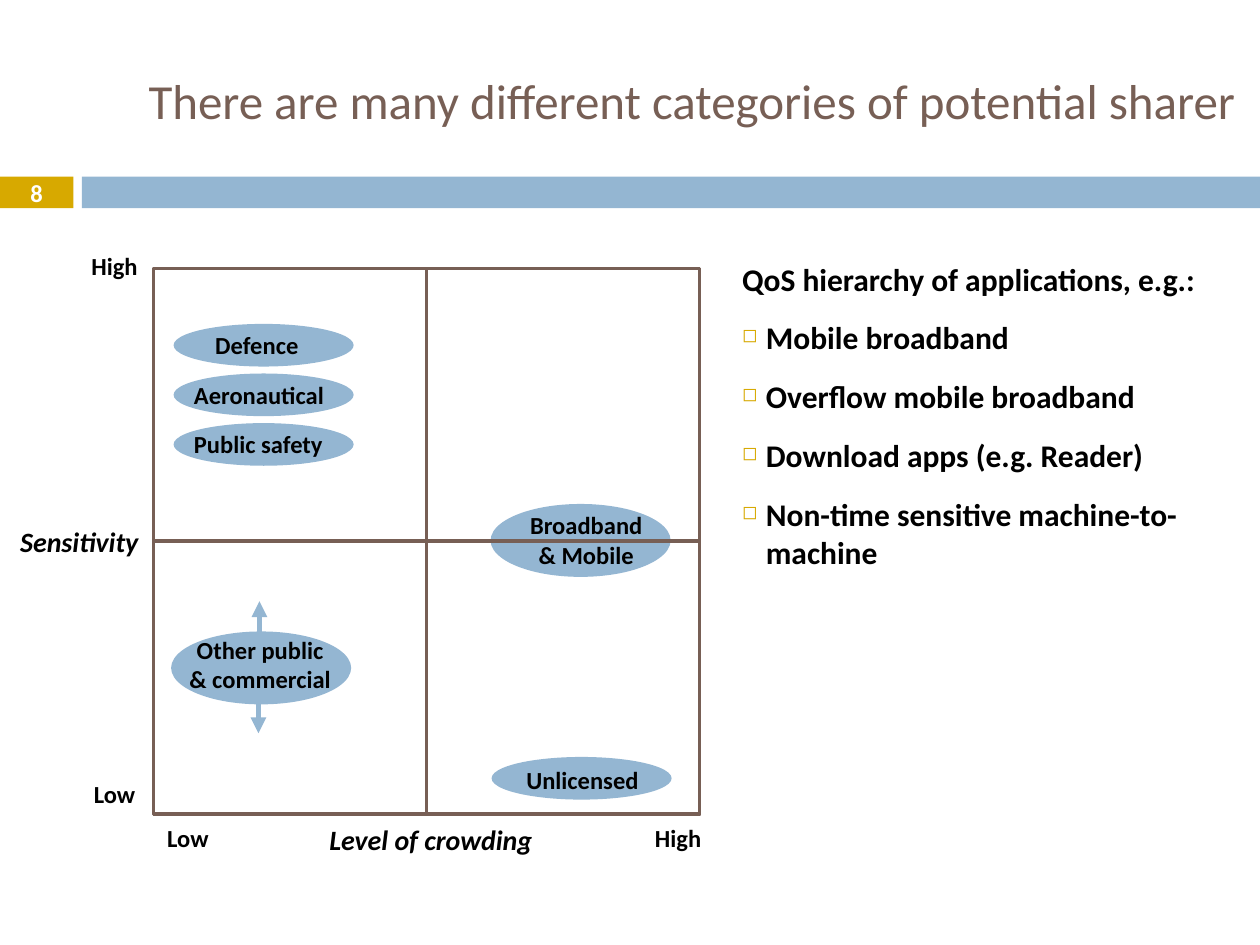
from dataclasses import dataclass
from itertools import product

from lxml.etree import SubElement
from pptx import Presentation
from pptx.dml.color import RGBColor
from pptx.enum.shapes import MSO_CONNECTOR, MSO_SHAPE
from pptx.enum.text import MSO_ANCHOR, MSO_AUTO_SIZE, PP_ALIGN
from pptx.oxml.ns import qn
from pptx.util import Cm, Pt


@dataclass(frozen=True)
class Theme:
    font: str = "Calibri"
    blue: RGBColor = RGBColor(0x94, 0xB6, 0xD2)
    gold: RGBColor = RGBColor(0xD7, 0xA9, 0x00)
    brown: RGBColor = RGBColor(0x77, 0x5F, 0x55)
    black: RGBColor = RGBColor(0, 0, 0)
    white: RGBColor = RGBColor(255, 255, 255)
    title: int = 28
    body: int = 18
    axis: int = 16
    label: int = 14


class Deck:
    """Holds the theme and the current slide, and draws each kind of element."""

    def __init__(self, prs, theme):
        self.t = theme
        self.s = prs.slides.add_slide(prs.slide_layouts[5])

    def run(self, p, text, size, color, bold=True, italic=False):
        r = p.add_run()
        r.text = text
        r.font.name = self.t.font
        r.font.size = Pt(size)
        r.font.color.rgb = color
        r.font.bold = bold
        r.font.italic = italic

    def title(self, text, x, y, w, h):
        sp = self.s.shapes.title
        sp.left, sp.top, sp.width, sp.height = Cm(x), Cm(y), Cm(w), Cm(h)
        tf = sp.text_frame
        tf.auto_size = MSO_AUTO_SIZE.NONE
        tf.vertical_anchor = MSO_ANCHOR.MIDDLE
        p = tf.paragraphs[0]
        p.alignment = PP_ALIGN.LEFT
        self.run(p, text, self.t.title, self.t.brown, bold=False)

    def shape(self, kind, x, y, w, h, fill=None, line=None):
        sp = self.s.shapes.add_shape(kind, Cm(x), Cm(y), Cm(w), Cm(h))
        sp.shadow.inherit = False
        if fill is None:
            sp.fill.background()
        else:
            sp.fill.solid()
            sp.fill.fore_color.rgb = fill
        if line is None:
            sp.line.fill.background()
        else:
            sp.line.color.rgb = line
            sp.line.width = Pt(2)
        return sp

    def number(self, sp, text):
        tf = sp.text_frame
        tf.margin_top = tf.margin_bottom = 0
        tf.vertical_anchor = MSO_ANCHOR.MIDDLE
        p = tf.paragraphs[0]
        p.alignment = PP_ALIGN.CENTER
        self.run(p, text, self.t.label, self.t.white)

    def box(self, x, y, w, h):
        tf = self.s.shapes.add_textbox(Cm(x), Cm(y), Cm(w), Cm(h)).text_frame
        tf.word_wrap = True
        return tf

    def label(self, lines, x, y, w, h=0.84, size=None, italic=False, align=PP_ALIGN.CENTER):
        p = self.box(x, y, w, h).paragraphs[0]
        p.alignment = align
        for i, text in enumerate(lines):
            if i:
                p.add_line_break()
            self.run(p, text, size or self.t.label, self.t.black, italic=italic)

    def bullets(self, heading, items, x, y, w, h):
        tf = self.box(x, y, w, h)
        for i, text in enumerate([heading, *items]):
            p = tf.add_paragraph() if i else tf.paragraphs[0]
            p.space_before = Pt(12)
            pPr = p._p.get_or_add_pPr()
            pPr.set("marL", str(Cm(0.48)))
            pPr.set("indent", str(-Cm(0.48)))
            if i:
                clr = SubElement(pPr, qn("a:buClr"))
                SubElement(clr, qn("a:srgbClr"), val=str(self.t.gold))
                SubElement(pPr, qn("a:buSzPct"), val="60000")
                SubElement(pPr, qn("a:buChar"), char="◻")
            self.run(p, text, self.t.body, self.t.black)

    def arrow(self, x, y1, y2):
        c = self.s.shapes.add_connector(MSO_CONNECTOR.STRAIGHT, Cm(x), Cm(y1), Cm(x), Cm(y2))
        c.line.color.rgb = self.t.blue
        c.line.width = Pt(3)
        SubElement(c.line._get_or_add_ln(), qn("a:tailEnd"), type="triangle")
        SubElement(c._element.spPr, qn("a:effectLst"))


def main():
    prs = Presentation()
    prs.slide_width, prs.slide_height = Cm(25.4), Cm(19.05)
    t = Theme()
    d = Deck(prs, t)
    rect, oval = MSO_SHAPE.RECTANGLE, MSO_SHAPE.OVAL

    d.number(d.shape(rect, 0, 3.56, 1.48, 0.64, t.gold), "8")
    d.shape(rect, 1.65, 3.56, 23.75, 0.64, t.blue)
    d.title("There are many different categories of potential sharer", 2.74, 0.64, 22.66, 2.74)

    ovals = [(9.91, 15.26, 0.86), (9.89, 10.16, 1.47), (3.45, 12.73, 1.47)]
    ovals += [(3.5, 6.53 + i, 0.86) for i in range(3)]
    for x, y, h in ovals:
        d.shape(oval, x, y, 3.63, h, t.blue)

    left, top, cell = 3.1, 5.41, 5.5
    d.shape(rect, left, top, 2 * cell, 2 * cell, line=t.brown)
    for col, row in product(range(2), repeat=2):
        d.shape(rect, left + col * cell, top + row * cell, cell, cell, line=t.brown)

    d.label(["Sensitivity"], -0.1, 10.44, 3.4, 0.94, t.axis, True)
    d.label(["Level of crowding"], 5.89, 16.46, 5.59, 0.94, t.axis, True)
    for text, x, y in [("High", 1.09, 4.93), ("Low", 1.09, 15.57),
                       ("Low", 2.57, 16.46), ("High", 12.45, 16.46)]:
        d.label([text], x, y, 2.44)

    for text, x, y, w in [("Defence", 4.09, 6.53, 2.21), ("Aeronautical", 3.66, 7.53, 3.63),
                          ("Public safety", 3.66, 8.52, 3.63), ("Unlicensed", 10.36, 15.29, 3.02)]:
        d.label([text], x, y, w, align=PP_ALIGN.LEFT)
    d.label(["Other public", "& commercial"], 3.43, 12.67, 3.63, 1.45)
    d.label(["Broadband & Mobile"], 10.31, 10.16, 3.02, 1.45)

    d.arrow(5.23, 12.85, 12.12)
    d.arrow(5.21, 14.07, 14.78)

    d.bullets("QoS hierarchy of applications, e.g.:",
              ["Mobile broadband", "Overflow mobile broadband", "Download apps (e.g. Reader)",
               "Non-time sensitive machine-to-machine"], 14.71, 5.11, 9.98, 13.49)
    prs.save("out.pptx")


if __name__ == "__main__":
    main()
